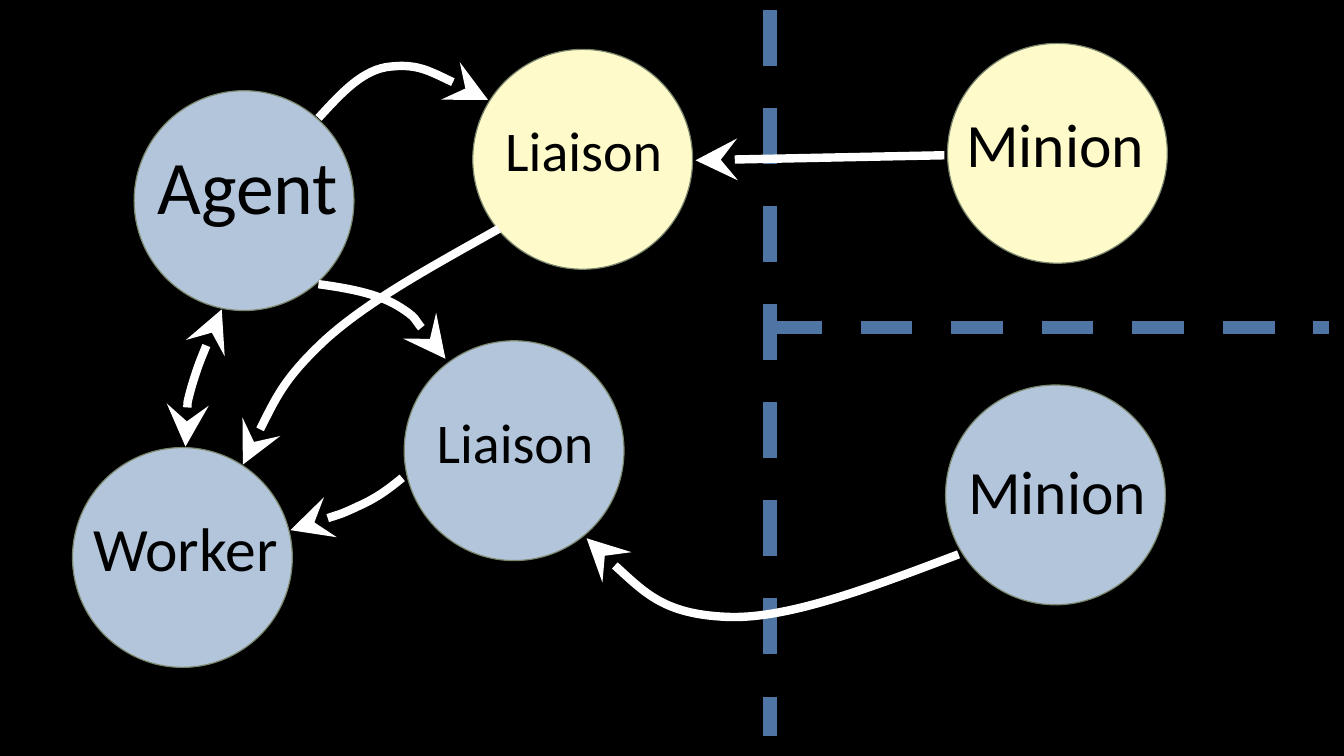
"""Draw agents, liaisons, workers and minions with the calls between them."""
from dataclasses import dataclass

from lxml.etree import SubElement
from pptx import Presentation
from pptx.dml.color import RGBColor
from pptx.enum.dml import MSO_LINE
from pptx.enum.shapes import MSO_CONNECTOR, MSO_SHAPE
from pptx.enum.text import MSO_ANCHOR, PP_ALIGN
from pptx.oxml.ns import qn
from pptx.util import Pt


@dataclass(frozen=True)
class Theme:
    font: str = "Calibri"
    back: RGBColor = RGBColor(0, 0, 0)
    text: RGBColor = RGBColor(0, 0, 0)
    blue: RGBColor = RGBColor(0xB3, 0xC5, 0xDA)
    cream: RGBColor = RGBColor(0xFE, 0xFA, 0xC9)
    rim: RGBColor = RGBColor(0x7A, 0x86, 0x6C)
    wall: RGBColor = RGBColor(0x4E, 0x75, 0xA3)
    arrow: RGBColor = RGBColor(0xFF, 0xFF, 0xFF)
    large: int = 54
    medium: int = 44
    small: int = 40


def add_line(start, end, color, width):
    line = slide.shapes.add_connector(
        MSO_CONNECTOR.STRAIGHT, *[Pt(n) for n in (*start, *end)])
    line.line.color.rgb = color
    line.line.width = Pt(width)
    SubElement(line._element.spPr, qn("a:effectLst"))
    return line


def add_heads(shape, ends):
    for end in ends:
        SubElement(shape.line._get_or_add_ln(), qn(f"a:{end}"),
                   type="stealth", w="lg", len="lg")


theme = Theme()
deck = Presentation()
deck.slide_width, deck.slide_height = Pt(960), Pt(540)
slide = deck.slides.add_slide(deck.slide_layouts[6])
slide.background.fill.solid()
slide.background.fill.fore_color.rgb = theme.back

for start, end, width in [((550, 7.2), (550, 525.6), 10),
                          ((550, 234), (949, 234), 9.25)]:
    wall = add_line(start, end, theme.wall, width)
    wall.line.dash_style = MSO_LINE.DASH

size = 157
wide = 223.2
nodes = [
    ("Agent", theme.blue, theme.large, (95.8, 64.8), (65.5, 95.8)),
    ("Liaison", theme.blue, theme.small, (288.7, 243.4), (256.3, 287.3)),
    ("Worker", theme.blue, theme.medium, (51.8, 319.7), (20.9, 360.7)),
    ("Minion", theme.blue, theme.medium, (675.4, 275), (643.7, 319.7)),
    ("Liaison", theme.cream, theme.small, (337.7, 35.3), (305.3, 79.2)),
    ("Minion", theme.cream, theme.medium, (676.8, 31), (642.2, 72)),
]
for name, color, points, (left, top), (text_left, text_top) in nodes:
    disc = slide.shapes.add_shape(
        MSO_SHAPE.OVAL, Pt(left), Pt(top), Pt(size), Pt(size))
    disc.shadow.inherit = False
    disc.fill.solid()
    disc.fill.fore_color.rgb = color
    disc.line.color.rgb = theme.rim
    disc.line.width = Pt(0.85)

    label = slide.shapes.add_textbox(
        Pt(text_left), Pt(text_top), Pt(wide), Pt(points * 1.2 + 7.2))
    frame = label.text_frame
    frame.word_wrap = True
    frame.vertical_anchor = MSO_ANCHOR.MIDDLE
    line = frame.paragraphs[0]
    line.alignment = PP_ALIGN.CENTER
    run = line.add_run()
    run.text = name
    run.font.name = theme.font
    run.font.size = Pt(points)
    run.font.color.rgb = theme.text

one_way = ["tailEnd"]
two_way = ["headEnd", "tailEnd"]
curves = [
    (two_way, [(158.4, 221), (149.8, 240.5), (141.8, 259.9), (136.8, 276.5),
               (132.5, 292.3), (132.5, 306), (132.5, 319)]),
    (one_way, [(227.5, 203), (248.4, 205.9), (268.6, 209.5), (283.7, 218.2),
               (298.8, 227.5), (318.2, 256.3), (318.2, 256.3)]),
    (one_way, [(287.3, 341.3), (278.6, 348.5), (269.3, 355.7), (256.3, 361.4),
               (242.6, 367.9), (225.4, 373), (207.4, 378.7)]),
    (one_way, [(684.7, 396), (623.5, 419), (562.3, 442.8), (518.4, 440.6),
               (473.8, 438.5), (446.4, 411.8), (419, 384.5)]),
    (one_way, [(356.4, 163.4), (310.3, 189.4), (263.5, 214.6), (232.6, 242.6),
               (202.3, 270.7), (187.9, 301.7), (173.5, 331.9)]),
    (one_way, [(227.5, 84.2), (243.4, 67), (259.2, 49), (279.4, 47.5),
               (298.8, 45.4), (324, 58.3), (348.5, 71.3)]),
]
for ends, points in curves:
    start, *rest = [(Pt(x), Pt(y)) for x, y in points]
    pen = slide.shapes.build_freeform(*start)
    pen.add_line_segments(rest, close=False)
    curve = pen.convert_to_shape()
    curve.shadow.inherit = False
    curve.fill.background()
    curve.line.color.rgb = theme.arrow
    curve.line.width = Pt(6)
    add_heads(curve, ends)

    steps = list(curve._element.iter(qn("a:lnTo")))
    track = steps[0].getparent()
    for first in range(0, len(steps), 3):
        bend = SubElement(track, qn("a:cubicBezTo"))
        for step in steps[first:first + 3]:
            bend.append(step[0])
            track.remove(step)

call = add_line((674.6, 110.9), (496.8, 114.5), theme.arrow, 6)
add_heads(call, one_way)

deck.save("out.pptx")
